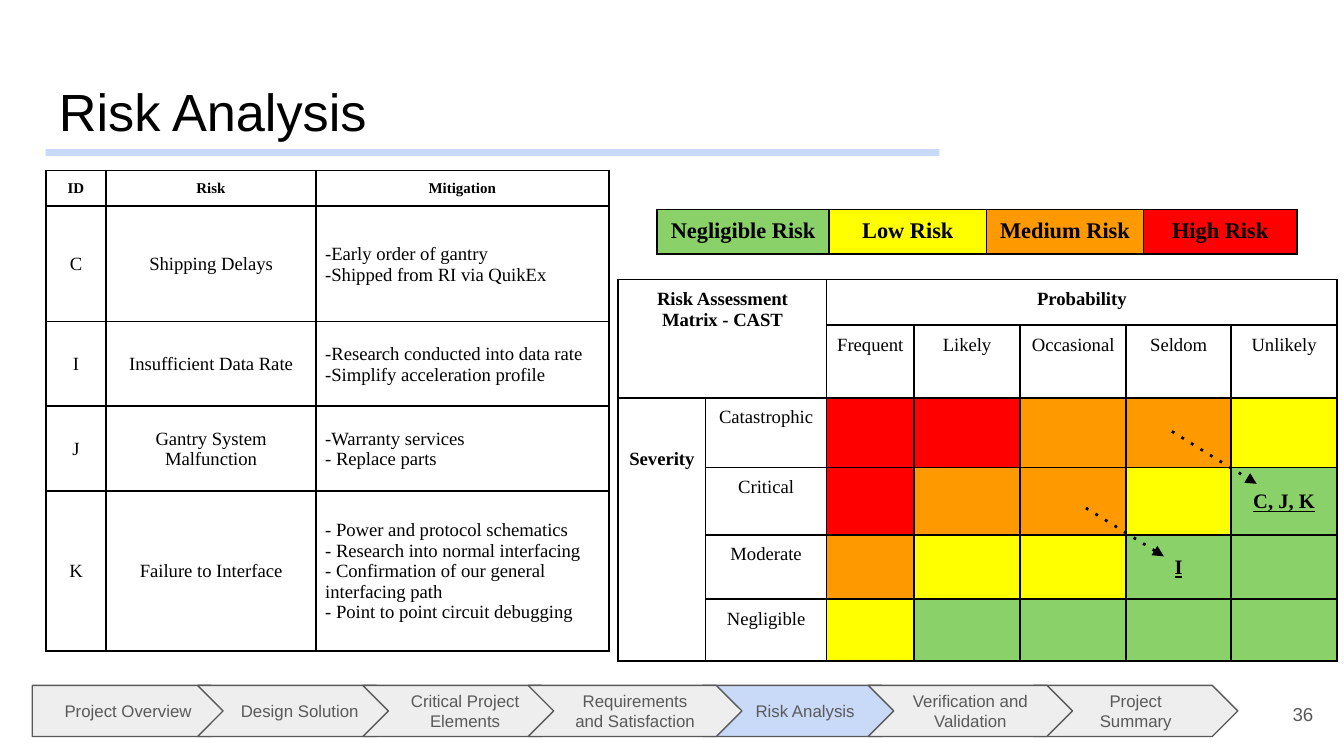
from lxml import etree
from pptx import Presentation
from pptx.dml.color import RGBColor
from pptx.enum.shapes import MSO_CONNECTOR, MSO_SHAPE
from pptx.enum.text import MSO_ANCHOR, PP_ALIGN
from pptx.oxml.ns import qn
from pptx.util import Inches, Pt

BLACK = RGBColor(0x00, 0x00, 0x00)
GRAY = RGBColor(0x59, 0x59, 0x59)
PALE = RGBColor(0xEE, 0xEE, 0xEE)
BLUE = RGBColor(0xC9, 0xDA, 0xF8)
GREEN = RGBColor(0x8A, 0xD1, 0x6A)
YELLOW = RGBColor(0xFF, 0xFF, 0x00)
ORANGE = RGBColor(0xFF, 0x99, 0x00)
RED = RGBColor(0xFF, 0x00, 0x00)
SANS, SERIF = "Arial", "Times New Roman"
LEFT, CENTER, RIGHT = PP_ALIGN.LEFT, PP_ALIGN.CENTER, PP_ALIGN.RIGHT
TOP, MIDDLE = MSO_ANCHOR.TOP, MSO_ANCHOR.MIDDLE
PENTAGON, CHEVRON, RECT = MSO_SHAPE.PENTAGON, MSO_SHAPE.CHEVRON, MSO_SHAPE.RECTANGLE
STRAIGHT = MSO_CONNECTOR.STRAIGHT

RISKS = [
    ("C", "Shipping Delays", "-Early order of gantry\n-Shipped from RI via QuikEx"),
    ("I", "Insufficient Data Rate",
     "-Research conducted into data rate\n-Simplify acceleration profile"),
    ("J", "Gantry System Malfunction", "-Warranty services\n- Replace parts"),
    ("K", "Failure to Interface",
     "- Power and protocol schematics\n- Research into normal interfacing\n"
     "- Confirmation of our general interfacing path\n- Point to point circuit debugging"),
]
LEVELS = [("Negligible Risk", GREEN), ("Low Risk", YELLOW),
          ("Medium Risk", ORANGE), ("High Risk", RED)]
ODDS = ["Frequent", "Likely", "Occasional", "Seldom", "Unlikely"]
GRADES = [
    ("Catastrophic", [RED, RED, ORANGE, ORANGE, YELLOW]),
    ("Critical", [RED, ORANGE, ORANGE, YELLOW, GREEN]),
    ("Moderate", [ORANGE, YELLOW, YELLOW, GREEN, GREEN]),
    ("Negligible", [YELLOW, GREEN, GREEN, GREEN, GREEN]),
]
MARKS = {("Critical", "Unlikely"): "C, J, K", ("Moderate", "Seldom"): "I"}
STEPS = ["Project Overview", "Design Solution", "Critical Project Elements",
         "Requirements and Satisfaction", "Risk Analysis",
         "Verification and Validation", "Project Summary"]
STACK = [0, 1, 2, 6, 4, 3, 5]  # back to front


def style(frame, size, font, color, align, bold=False, under=False):
    for para in frame.paragraphs:
        para.alignment = align
        para.font.size = Pt(size)
        for run in para.runs:
            run.font.size, run.font.name = Pt(size), font
            run.font.color.rgb = color
            run.font.bold, run.font.underline = bold, under


def inset(frame, gap=0.1):
    frame.word_wrap = True
    frame.margin_left = frame.margin_right = Inches(gap)
    frame.margin_top = frame.margin_bottom = Inches(gap)


def add_text(slide, box, text, size, color, align, anchor):
    frame = slide.shapes.add_textbox(*map(Inches, box)).text_frame
    inset(frame)
    frame.text = text
    frame.vertical_anchor = anchor
    style(frame, size, SANS, color, align)


def add_grid(slide, left, top, cols, rows):
    """Plain table with a thin black border round every cell."""
    frame = slide.shapes.add_table(len(rows), len(cols), Inches(left), Inches(top),
                                   Inches(sum(cols)), Inches(sum(rows)))
    table = frame.table
    table.first_row = table.horz_banding = False
    for col, width in zip(table.columns, cols):
        col.width = Inches(width)
    for row, height in zip(table.rows, rows):
        row.height = Inches(height)
    for cell in table.iter_cells():
        props = cell._tc.get_or_add_tcPr()
        for side in ("a:lnL", "a:lnR", "a:lnT", "a:lnB"):
            line = etree.SubElement(props, qn(side), w=str(Pt(1)))
            fill = etree.SubElement(line, qn("a:solidFill"))
            etree.SubElement(fill, qn("a:srgbClr"), val=str(BLACK))
        put(cell, "")
    return table


def put(cell, text, size=10, bold=False, align=CENTER, anchor=TOP, fill=None, under=False):
    cell.margin_left = cell.margin_right = cell.margin_top = Inches(0.07)
    cell.margin_bottom = Inches(0.06)
    cell.vertical_anchor = anchor
    cell.text_frame.text = text
    style(cell.text_frame, size, SERIF, BLACK, align, bold, under)
    if fill is None:
        cell.fill.background()
    else:
        cell.fill.solid()
        cell.fill.fore_color.rgb = fill


def paint(shape, fill):
    shape.shadow.inherit = False
    shape.fill.solid()
    shape.fill.fore_color.rgb = fill


def add_nav(slide, left, top, height):
    lap = 0.29
    boxes = []
    for step in STEPS:
        width = 1.59 if step.startswith("Requirements") else 1.52
        boxes.append((left, top, width, height))
        left += width - lap
    for i in STACK:
        kind = CHEVRON if i else PENTAGON
        shape = slide.shapes.add_shape(kind, *map(Inches, boxes[i]))
        paint(shape, BLUE if STEPS[i] == "Risk Analysis" else PALE)
        shape.line.color.rgb = GRAY
        shape.line.width = Pt(0.75)
        frame = shape.text_frame
        inset(frame)
        frame.text = STEPS[i]
        frame.vertical_anchor = MIDDLE
        style(frame, 9, SANS, GRAY, CENTER)


def add_head(slide, left, top, width):
    bar = slide.shapes.add_shape(RECT, Inches(left), Inches(top + 0.62),
                                 Inches(6.65), Inches(0.05))
    paint(bar, BLUE)
    bar.line.fill.background()
    add_text(slide, (left, top, width, 0.63), "Risk Analysis", 28, BLACK, LEFT, TOP)


def add_risks(slide, left, top):
    table = add_grid(slide, left, top, [0.45, 1.56, 2.18], [0.2, 0.86, 0.63, 0.63, 1.19])
    for c, label in enumerate(["ID", "Risk", "Mitigation"]):
        put(table.cell(0, c), label, 8, True)
    for r, risk in enumerate(RISKS, 1):
        for c, text in enumerate(risk):
            put(table.cell(r, c), text, align=LEFT if c == 2 else CENTER, anchor=MIDDLE)


def add_legend(slide, left, top):
    table = add_grid(slide, left, top, [1.28, 1.17, 1.17, 1.14], [0.31])
    for c, (label, fill) in enumerate(LEVELS):
        put(table.cell(0, c), label, 12, True, fill=fill)


def add_matrix(slide, left, top):
    table = add_grid(slide, left, top, [0.65, 0.9, 0.65, 0.79, 0.79, 0.78, 0.79],
                     [0.34, 0.54, 0.52, 0.5, 0.48, 0.46])
    # Merged headings
    table.cell(0, 0).merge(table.cell(1, 1))
    table.cell(0, 2).merge(table.cell(0, 6))
    table.cell(2, 0).merge(table.cell(5, 0))
    put(table.cell(0, 0), "Risk Assessment Matrix - CAST", bold=True)
    put(table.cell(0, 2), "Probability", bold=True)
    put(table.cell(2, 0), "Severity", bold=True)
    table.cell(2, 0).margin_top = Inches(0.38)
    # Labels and coloured grades
    for c, odds in enumerate(ODDS, 2):
        put(table.cell(1, c), odds)
    for r, (grade, fills) in enumerate(GRADES, 2):
        put(table.cell(r, 1), grade)
        for c, (odds, fill) in enumerate(zip(ODDS, fills), 2):
            put(table.cell(r, c), MARKS.get((grade, odds), ""), 11, True,
                anchor=MIDDLE, fill=fill, under=True)
    # Arrows from the old grade to the new one
    for ends in [(3.48, 1.7, 4.06, 2.06), (4.12, 1.13, 4.75, 1.52)]:
        add_arrow(slide, left + ends[0], top + ends[1], left + ends[2], top + ends[3])


def add_arrow(slide, *ends):
    arrow = slide.shapes.add_connector(STRAIGHT, *map(Inches, ends))
    arrow.line.color.rgb = BLACK
    arrow.line.width = Pt(1.5)
    line = arrow.line._get_or_add_ln()
    etree.SubElement(line, qn("a:prstDash"), val="dot")
    etree.SubElement(line, qn("a:tailEnd"), type="triangle")
    etree.SubElement(arrow._element.spPr, qn("a:effectLst"))


def main():
    deck = Presentation()
    deck.slide_width = Inches(10)
    deck.slide_height = deck.slide_width * 9 // 16
    slide = deck.slides.add_slide(deck.slide_layouts[6])
    add_nav(slide, 0.24, 5.1, 0.38)
    add_head(slide, 0.34, 0.49, 9.32)
    add_text(slide, (9.27, 5.1, 0.6, 0.43), "36", 10, GRAY, RIGHT, MIDDLE)
    add_risks(slide, 0.34, 1.27)
    add_legend(slide, 4.89, 1.56)
    add_matrix(slide, 4.6, 2.08)
    deck.save("out.pptx")


if __name__ == "__main__":
    main()
